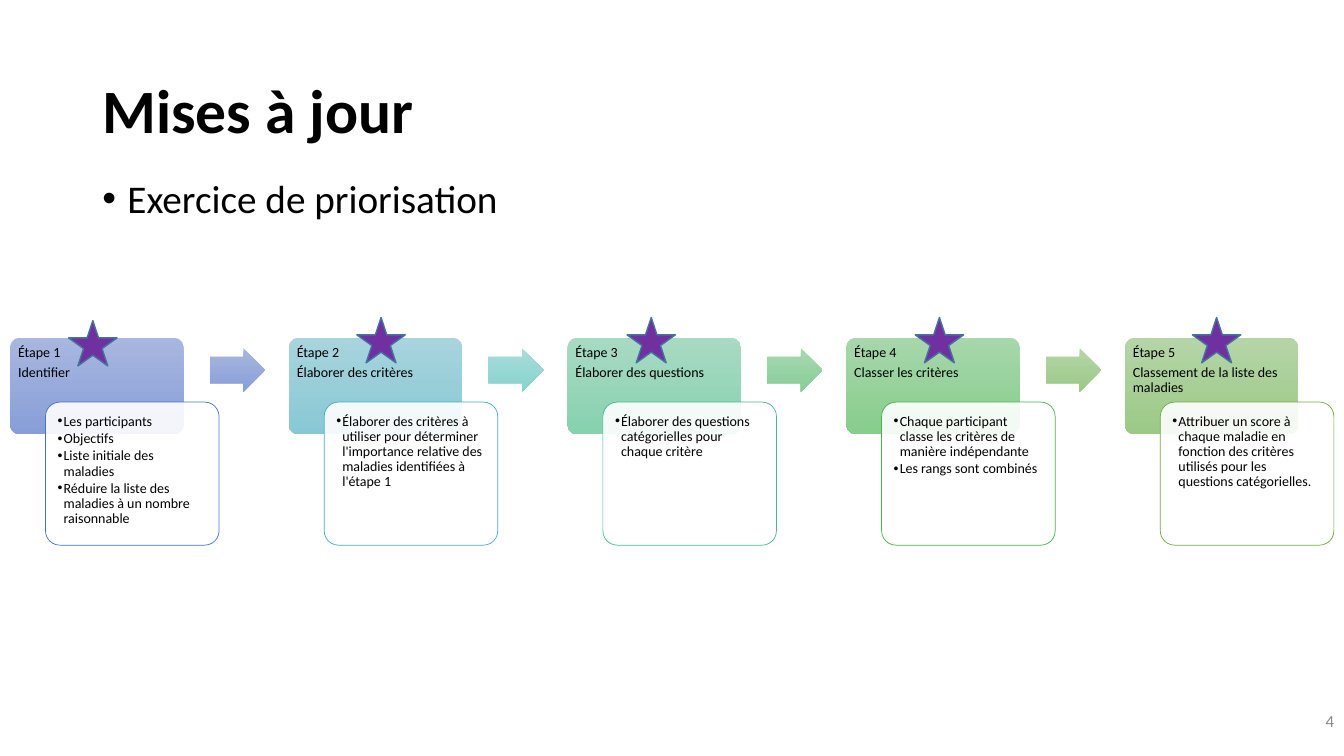
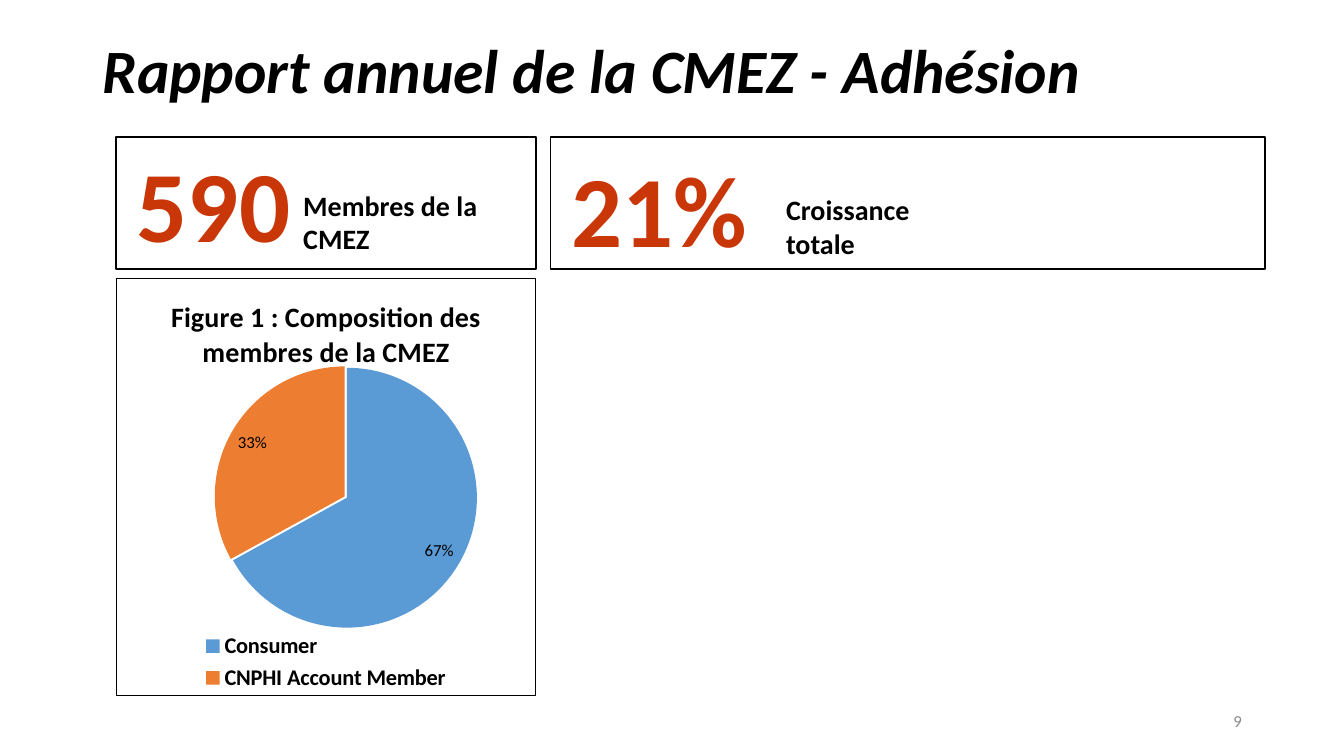
from lxml import etree
from pptx import Presentation
from pptx.chart.data import CategoryChartData
from pptx.dml.color import RGBColor
from pptx.enum import chart as ec, shapes as es, text as et
from pptx.oxml import parse_xml
from pptx.oxml.ns import nsdecls, qn
from pptx.util import Pt

FONT = "Calibri"
INK = {
    "black": "000000", "white": "FFFFFF", "grey": "898989",
    "star": "7030A0", "rim": "43739E",
    "red": "C93709", "edge": "A50021",
    "blue": "5B9BD5", "orange": "ED7D31",
}
STEPS = [
    dict(head=["Étape 1", "Identifier"],
         items=["Les participants", "Objectifs", "Liste initiale des maladies",
                "Réduire la liste des maladies à un nombre raisonnable"],
         fade=("A8B7DF", "889ED7"), line="4472C4",
         arrow=("A8B7DF", "889ED7"), star=(41.8, -12.2)),
    dict(head=["Étape 2", "Élaborer des critères"],
         items=["Élaborer des critères à utiliser pour déterminer l'importance "
                "relative des maladies identifiées à l'étape 1"],
         fade=("A8D4DD", "88C8D4"), line="43AFC0",
         arrow=("A8DCD9", "87D3CF"), star=(48.6, -14.4)),
    dict(head=["Étape 3", "Élaborer des questions"],
         items=["Élaborer des questions catégorielles pour chaque critère"],
         fade=("A8DAC3", "87D1AF"), line="43BB8D",
         arrow=("A7D8B1", "87CE96"), star=(42.5, -14.4)),
    dict(head=["Étape 4", "Classer les critères"],
         items=["Chaque participant classe les critères de manière indépendante",
                "Les rangs sont combinés"],
         fade=("A7D7AB", "87CD8C"), line="45B451",
         arrow=("B5D5A7", "9CC987"), star=(49.3, -14.4)),
    dict(head=["Étape 5", "Classement de la liste des maladies"],
         items=["Attribuer un score à chaque maladie en fonction des critères "
                "utilisés pour les questions catégorielles."],
         fade=("B5D5A7", "9CC987"), line="70AD47",
         arrow=None, star=(48.2, -14.4)),
]


def rgb(name):
    return RGBColor.from_string(INK.get(name, name))


def pts(box):
    return [Pt(v) for v in box]


def write(para, words, size, color="black", bold=False, slant=False):
    run = para.add_run()
    run.text = words
    font = run.font
    font.name, font.size, font.bold, font.italic = FONT, Pt(size), bold, slant
    font.color.rgb = rgb(color)
    return run


def bullet(para, dent):
    props = para._p.get_or_add_pPr()
    props.set("marL", str(Pt(dent)))
    props.set("indent", str(-Pt(dent)))
    etree.SubElement(props, qn("a:buFont")).set("typeface", "Arial")
    etree.SubElement(props, qn("a:buChar")).set("char", "•")


def fill_text(frame, lines, size, after, pad, dent=0):
    frame.word_wrap = True
    frame.vertical_anchor = et.MSO_ANCHOR.TOP
    frame.margin_left = frame.margin_right = Pt(pad)
    frame.margin_top = frame.margin_bottom = Pt(pad)
    for i, line in enumerate(lines):
        para = frame.paragraphs[0] if i == 0 else frame.add_paragraph()
        if dent:
            bullet(para, dent)
        para.alignment = et.PP_ALIGN.LEFT
        para.line_spacing = 0.9
        para.space_after = Pt(after)
        write(para, line, size)


def label(slide, box, words, size, **look):
    frame = slide.shapes.add_textbox(*pts(box)).text_frame
    frame.word_wrap = True
    return frame, write(frame.paragraphs[0], words, size, **look)


def shape(slide, kind, box, adjust=(), fill=None, line=None, width=1):
    item = slide.shapes.add_shape(kind, *pts(box))
    item.shadow.inherit = False
    for i, value in enumerate(adjust):
        item.adjustments[i] = value
    if fill is None:
        item.fill.background()
    elif isinstance(fill, tuple):
        item.fill.gradient()
        item.fill.gradient_angle = 270
        for stop, color in zip(item.fill.gradient_stops, fill):
            stop.color.rgb = rgb(color)
    else:
        item.fill.solid()
        item.fill.fore_color.rgb = rgb(fill)
    if line:
        item.line.color.rgb = rgb(line)
        item.line.width = Pt(width)
    else:
        item.line.fill.background()
    return item


def start(deck, title, top, number, right, slant=False):
    slide = deck.slides.add_slide(deck.slide_layouts[5])
    head = slide.shapes.title
    head.left, head.top, head.width, head.height = pts((66, top, 828, 104.4))
    frame = head.text_frame
    frame.auto_size = et.MSO_AUTO_SIZE.NONE
    frame.vertical_anchor = et.MSO_ANCHOR.MIDDLE
    para = frame.paragraphs[0]
    para.alignment = et.PP_ALIGN.LEFT
    para.line_spacing = 0.9
    write(para, title, 44, bold=True, slant=slant)
    foot, _ = label(slide, (right - 216, 500.5, 216, 28.8), number, 12, color="grey")
    foot.vertical_anchor = et.MSO_ANCHOR.MIDDLE
    foot.paragraphs[0].alignment = et.PP_ALIGN.RIGHT
    return slide


def step(slide, x, y, data):
    round_box = es.MSO_SHAPE.ROUNDED_RECTANGLE
    head = shape(slide, round_box, (x, y, 124, 69), [0.1], data["fade"])
    fill_text(head.text_frame, data["head"], 10, 3.5, 3.7)
    card = shape(slide, round_box, (x + 25.3, y + 46, 124, 102.2), [0.1],
                 "white", data["line"], 0.5)
    tint = card.fill._xPr.find(qn("a:solidFill")).find(qn("a:srgbClr"))
    etree.SubElement(tint, qn("a:alpha")).set("val", "90000")
    fill_text(card.text_frame, data["items"], 10, 1.5, 5.7, 4.3)
    if data["arrow"]:
        shape(slide, es.MSO_SHAPE.RIGHT_ARROW, (x + 142.6, y + 7.6, 39.6, 31),
              [0.6, 0.5], data["arrow"])
    dx, dy = data["star"]
    shape(slide, es.MSO_SHAPE.STAR_5_POINT, (x + dx, y + dy, 34.6, 32.4),
          fill="star", line="rim")


def panel(slide, box, number, words, gap, drop):
    x, y, wide, high = box
    shape(slide, es.MSO_SHAPE.RECTANGLE, box, line="black")
    _, run = label(slide, (x + 8, y + drop, 160, high), number, 72,
                   color="red", bold=True)
    edge = parse_xml(
        f'<a:ln {nsdecls("a")} w="{Pt(1.75)}"><a:solidFill>'
        f'<a:srgbClr val="{INK["edge"]}"/></a:solidFill></a:ln>')
    run._r.get_or_add_rPr().insert(0, edge)
    label(slide, (x + gap, y + 33 + drop, 155.5, 55), words, 20, bold=True)


def place_plot(chart, x, y, wide, high):
    area = chart.element.find(".//" + qn("c:plotArea"))
    for old in area.findall(qn("c:layout")):
        area.remove(old)
    parts = [("layoutTarget", "inner"), ("xMode", "edge"), ("yMode", "edge"),
             ("x", x), ("y", y), ("w", wide), ("h", high)]
    body = "".join(f'<c:{tag} val="{value}"/>' for tag, value in parts)
    area.insert(0, parse_xml(
        f'<c:layout {nsdecls("c")}><c:manualLayout>{body}</c:manualLayout></c:layout>'))


def frame_chart(chart):
    chart.element.find(qn("c:chart")).addnext(parse_xml(
        f'<c:spPr {nsdecls("c", "a")}><a:noFill/><a:ln w="{Pt(0.75)}"><a:solidFill>'
        f'<a:srgbClr val="{INK["black"]}"/></a:solidFill></a:ln></c:spPr>'))


def pie(slide, box):
    data = CategoryChartData()
    data.categories = ["Consumer", "CNPHI Account Member"]
    data.add_series("Series 1", (67, 33))
    chart = slide.shapes.add_chart(ec.XL_CHART_TYPE.PIE, *pts(box), data).chart
    chart.font.name, chart.font.size = FONT, Pt(10)
    chart.font.color.rgb = rgb("black")
    chart.has_title = True
    write(chart.chart_title.text_frame.paragraphs[0],
          "Figure 1 : Composition des membres de la CMEZ", 20, bold=True)
    chart.has_legend = True
    legend = chart.legend
    legend.position = ec.XL_LEGEND_POSITION.BOTTOM
    legend.include_in_layout = False
    legend.font.name, legend.font.size, legend.font.bold = FONT, Pt(16), True
    plot = chart.plots[0]
    plot.vary_by_categories = True
    for i, color in enumerate(("blue", "orange")):
        fill = plot.series[0].points[i].format.fill
        fill.solid()
        fill.fore_color.rgb = rgb(color)
    last = chart.element.findall(".//" + qn("c:dPt"))[-1]
    last.find(qn("c:spPr")).addprevious(
        parse_xml(f'<c:explosion {nsdecls("c")} val="2"/>'))
    plot.has_data_labels = True
    tags = plot.data_labels
    tags.show_value, tags.show_percentage = False, True
    tags.number_format, tags.number_format_is_linked = "0%", False
    tags.position = ec.XL_LABEL_POSITION.INSIDE_END
    tags.font.name, tags.font.size = FONT, Pt(12)
    tags.font.color.rgb = rgb("black")
    place_plot(chart, 0.24, 0.2, 0.62, 0.65)
    frame_chart(chart)


def updates(deck):
    slide = start(deck, "Mises à jour", 28.8, "4", 960)
    frame = slide.shapes.add_textbox(*pts((66, 124.6, 828, 50))).text_frame
    fill_text(frame, ["Exercice de priorisation"], 28, 0, 7.2, 18)
    frame.margin_top = Pt(3.6)
    for i, data in enumerate(STEPS):
        step(slide, 7.2 + i * 199.08, 241.2, data)


def report(deck):
    slide = start(deck, "Rapport annuel de la CMEZ - Adhésion", 0, "9", 894.2,
                  slant=True)
    left, top, wide, high = 82.8, 97.9, 300.2, 94.3
    pie(slide, (left, 198.7, wide, 298.8))
    panel(slide, (left, top, wide, high), "590", "Membres de la CMEZ", 126.7, 0)
    panel(slide, (393.1, top, 510.5, high), "21%", "Croissance totale", 161.3, 3)


def main():
    deck = Presentation()
    deck.slide_width, deck.slide_height = Pt(960), Pt(540)
    updates(deck)
    report(deck)
    deck.save("out.pptx")


if __name__ == "__main__":
    main()
